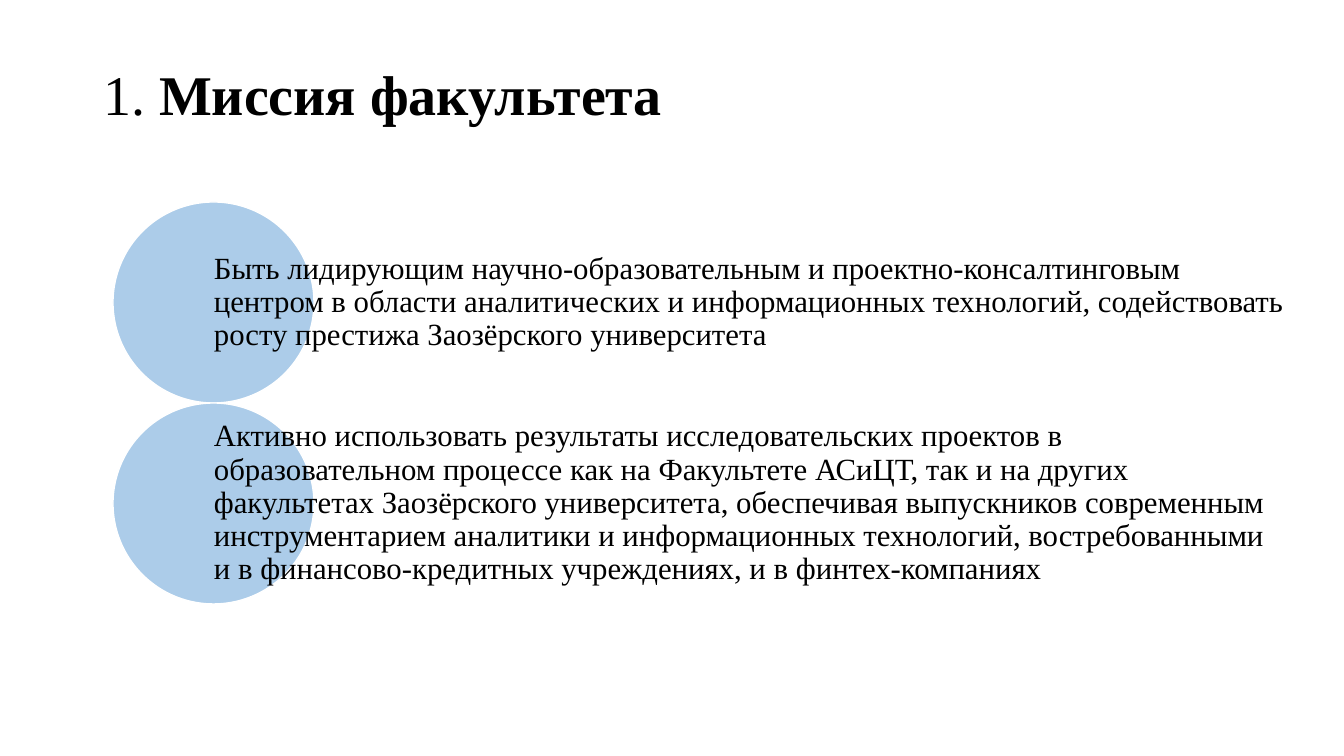
import pptx
import pptx.util
import pptx.dml.color
import pptx.enum.shapes
import pptx.enum.text
import pptx.oxml.ns
import lxml.etree

PX = 914400 / 100.8
BLUE = pptx.dml.color.RGBColor(0x5B, 0x9B, 0xD5)
WHITE = pptx.dml.color.RGBColor(0xFF, 0xFF, 0xFF)
BLACK = pptx.dml.color.RGBColor(0x00, 0x00, 0x00)
CIRCLE_LEFT, FIRST_TOP, DIAMETER = 113, 202, 201
TEXT_LEFT, TEXT_WIDTH = 214, 1073
MISSIONS = [
    "Быть лидирующим научно-образовательным и проектно-консалтинговым центром "
    "в области аналитических и информационных технологий, содействовать росту "
    "престижа Заозёрского университета",
    "Активно использовать результаты исследовательских проектов в образовательном "
    "процессе как на Факультете АСиЦТ, так и на других факультетах Заозёрского "
    "университета, обеспечивая выпускников современным инструментарием аналитики "
    "и информационных технологий, востребованными и в финансово-кредитных "
    "учреждениях, и в финтех-компаниях",
]


def place(*lengths):
    return [pptx.util.Emu(round(length * PX)) for length in lengths]


def format_text(frame, size):
    frame.word_wrap = True
    frame.auto_size = pptx.enum.text.MSO_AUTO_SIZE.NONE
    frame.vertical_anchor = pptx.enum.text.MSO_ANCHOR.MIDDLE
    para = frame.paragraphs[0]
    para.alignment = pptx.enum.text.PP_ALIGN.LEFT
    para.line_spacing = 0.9
    for span in para.runs:
        span.font.name = "Times New Roman"
        span.font.size = pptx.util.Pt(size)
        span.font.color.rgb = BLACK


deck = pptx.Presentation()
deck.slide_width, deck.slide_height = place(1344, 756)
page = deck.slides.add_slide(deck.slide_layouts[5])

title = page.shapes.title
title.left, title.top, title.width, title.height = place(93, 41, 1159, 113)
title.text_frame.text = "1. "
heading = title.text_frame.paragraphs[0].add_run()
heading.text = "Миссия факультета"
heading.font.bold = True
format_text(title.text_frame, 40)

for row, mission in enumerate(MISSIONS):
    top = FIRST_TOP + row * DIAMETER
    circle = page.shapes.add_shape(
        pptx.enum.shapes.MSO_SHAPE.OVAL, *place(CIRCLE_LEFT, top, DIAMETER, DIAMETER))
    circle.shadow.inherit = False
    circle.fill.solid()
    circle.fill.fore_color.rgb = BLUE
    circle.line.color.rgb = WHITE
    circle.line.width = pptx.util.Pt(1)
    color = circle.fill._xPr.find(".//" + pptx.oxml.ns.qn("a:srgbClr"))
    lxml.etree.SubElement(color, pptx.oxml.ns.qn("a:alpha"), val="50000")

    box = page.shapes.add_textbox(*place(TEXT_LEFT, top, TEXT_WIDTH, DIAMETER))
    frame = box.text_frame
    frame.text = mission
    frame.margin_left, frame.margin_top, frame.margin_right, frame.margin_bottom = place(0, 3, 0, 3)
    format_text(frame, 22)

deck.save("out.pptx")
